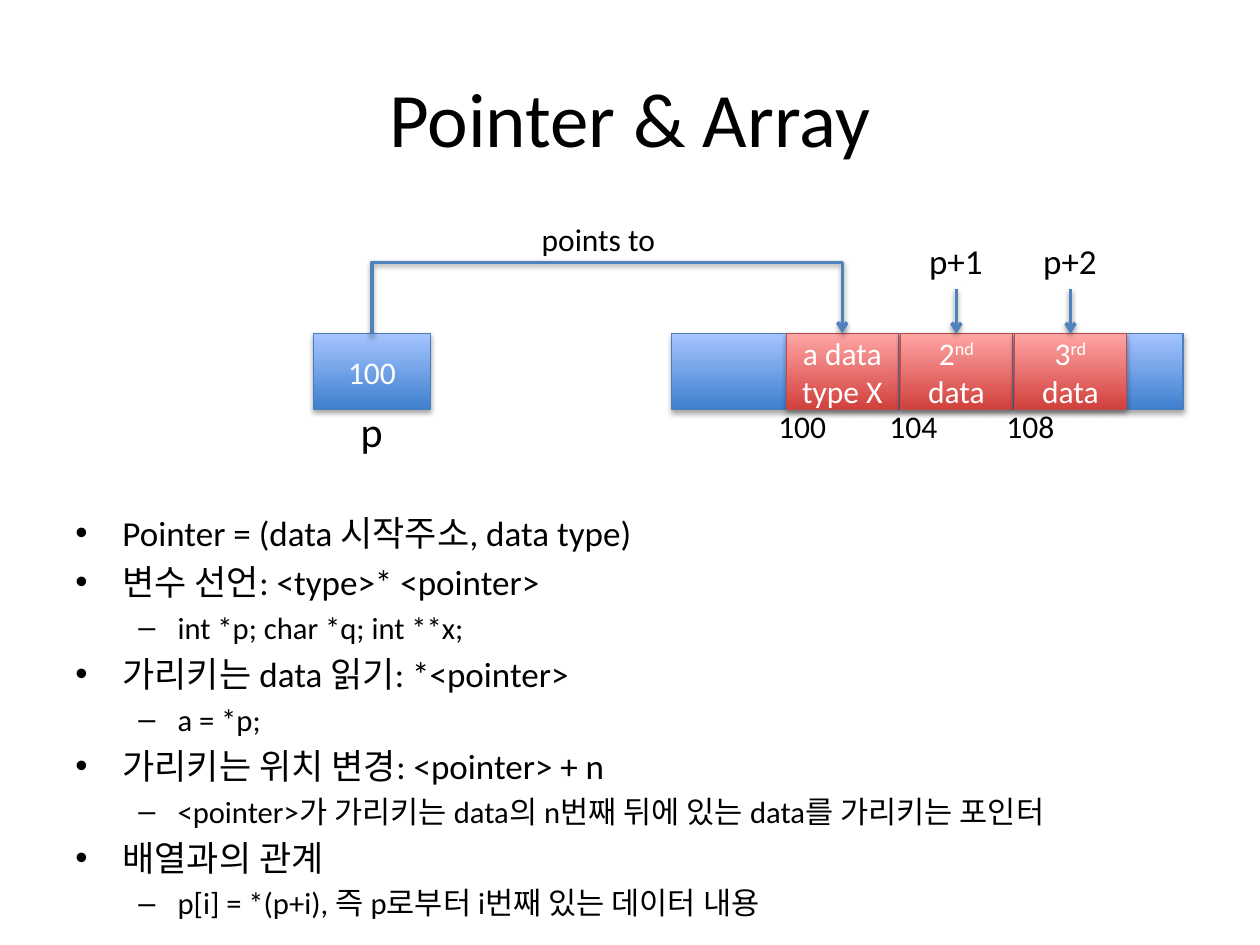
from dataclasses import dataclass

from lxml import etree
from pptx import Presentation
from pptx import util as u
from pptx.dml.color import RGBColor
from pptx.enum import shapes, text
from pptx.oxml import ns

Cm, Pt = u.Cm, u.Pt


@dataclass(frozen=True)
class Theme:
    font: str = "Calibri"
    ink: str = "000000"
    cell_ink: str = "FFFFFF"
    arrow: str = "4F81BD"
    title: float = 44
    name: float = 24
    body: float = 20
    detail: float = 17.5
    label: float = 18


@dataclass(frozen=True)
class Palette:
    bottom: str
    top: str
    border: str


@dataclass(frozen=True)
class Cell:
    left: float
    width: float
    palette: Palette
    lines: tuple = ()
    ordinal: str = ""  # raised suffix, followed by " data"

    @property
    def center(self) -> float:
        return self.left + self.width / 2


@dataclass(frozen=True)
class Label:
    words: str
    left: float
    top: float
    width: float
    height: float
    size: float


@dataclass(frozen=True)
class Bullet:
    words: str
    level: int = 0


THEME = Theme()
BLUE = Palette("3F80CE", "A4C4FF", "4B7EBC")
RED = Palette("D1403C", "FFA6A5", "BF4C48")

CELL_TOP, CELL_HEIGHT = 6.73, 1.52
ELEMENT_LEFT, ELEMENT_PITCH, ELEMENT_WIDTH = 15.85, 2.3, 2.26

POINTER = Cell(6.32, 2.36, BLUE, ("100",))
MEMORY = Cell(13.54, 10.31, BLUE)
ELEMENTS = [
    Cell(ELEMENT_LEFT + i * ELEMENT_PITCH, ELEMENT_WIDTH, RED, lines, ordinal)
    for i, (lines, ordinal) in enumerate(
        [(("a data", "type X"), ""), (("2",), "nd"), (("3",), "rd")])
]
LABELS = [
    Label("points to", 10.67, 4.32, 2.84, 1.02, THEME.label),
    Label("p", POINTER.center - 0.48, 8.05, 0.96, 1.27, THEME.name),
    *(Label(address, left, 8.08, 1.5, 1.02, THEME.label)
      for address, left in [("100", 15.44), ("104", 17.68), ("108", 20.04)]),
    *(Label(f"p+{i}", ELEMENTS[i].center - 0.8, 4.7, 1.6, 1.12, THEME.body)
      for i in (1, 2)),
]
BULLETS = [
    Bullet("Pointer = (data 시작주소, data type)"),
    Bullet("변수 선언: <type>* <pointer>"),
    Bullet("int *p; char *q; int **x;", 1),
    Bullet("가리키는 data 읽기: *<pointer>"),
    Bullet("a = *p;", 1),
    Bullet("가리키는 위치 변경: <pointer> + n"),
    Bullet("<pointer>가 가리키는 data의 n번째 뒤에 있는 data를 가리키는 포인터", 1),
    Bullet("배열과의 관계"),
    Bullet("p[i] = *(p+i), 즉 p로부터 i번째 있는 데이터 내용", 1),
]


def add_xml(parent, tag: str, **attributes):
    child = etree.SubElement(parent, ns.qn(tag))
    for key, value in attributes.items():
        child.set(key, str(value))
    return child


def set_font(paragraph, size: float, color: str) -> None:
    font = paragraph.font
    font.name, font.size = THEME.font, Pt(size)
    font.color.rgb = RGBColor.from_string(color)


def add_shadow(shape, opacity: int, distance: float) -> None:
    """Cast a soft shadow downwards; call after fill and line are set."""
    effects = add_xml(shape._element.spPr, "a:effectLst")
    shadow = add_xml(effects, "a:outerShdw", blurRad=Pt(3.1), dist=Pt(distance),
                     dir=5400000, rotWithShape=0)
    add_xml(add_xml(shadow, "a:srgbClr", val="000000"), "a:alpha", val=opacity * 1000)


def draw_cell(slide, cell: Cell) -> None:
    box = slide.shapes.add_shape(shapes.MSO_SHAPE.RECTANGLE, Cm(cell.left), Cm(CELL_TOP),
                                 Cm(cell.width), Cm(CELL_HEIGHT))
    box.fill.gradient()
    box.fill.gradient_angle = 90
    for stop, color in zip(box.fill.gradient_stops, (cell.palette.bottom, cell.palette.top)):
        stop.color.rgb = RGBColor.from_string(color)
    box.line.color.rgb = RGBColor.from_string(cell.palette.border)
    box.line.width = Pt(0.75)
    add_shadow(box, 35, 1.8)
    frame = box.text_frame
    frame.vertical_anchor = text.MSO_ANCHOR.MIDDLE
    frame.text = "\n".join(cell.lines)
    if cell.ordinal:
        for words, baseline in ((cell.ordinal, 30000), (" data", 0)):
            run = frame.paragraphs[0].add_run()
            run.text = words
            run._r.get_or_add_rPr().set("baseline", str(baseline))
    for paragraph in frame.paragraphs:
        paragraph.alignment = text.PP_ALIGN.CENTER
        set_font(paragraph, THEME.label, THEME.cell_ink)


def draw_label(slide, label: Label):
    box = slide.shapes.add_textbox(Cm(label.left), Cm(label.top),
                                   Cm(label.width), Cm(label.height))
    box.text_frame.word_wrap = False
    box.text_frame.text = label.words
    set_font(box.text_frame.paragraphs[0], label.size, THEME.ink)
    return box.text_frame


def draw_arrow(slide, kind, x1: float, y1: float, x2: float, y2: float):
    arrow = slide.shapes.add_connector(kind, Cm(x1), Cm(y1), Cm(x2), Cm(y2))
    arrow.line.color.rgb = RGBColor.from_string(THEME.arrow)
    arrow.line.width = Pt(2)
    add_xml(arrow.line._get_or_add_ln(), "a:tailEnd", type="arrow")
    add_shadow(arrow, 38, 1.6)
    return arrow


def draw_bridge(slide, start: float, end: float, rise: float) -> None:
    """Elbow arrow that climbs by rise, crosses over and comes down again."""
    middle, half_span, half_depth = (start + end) / 2, (end - start) / 2, 0.01
    bridge = draw_arrow(slide, shapes.MSO_CONNECTOR.ELBOW,
                        middle + half_depth, CELL_TOP + half_span,
                        middle - half_depth, CELL_TOP - half_span)
    properties = bridge._element.spPr
    properties.find(ns.qn("a:xfrm")).set("rot", "5400000")
    bend = round(rise / (2 * half_depth) * 100000)
    guides = properties.find(ns.qn("a:prstGeom")).find(ns.qn("a:avLst"))
    add_xml(guides, "a:gd", name="adj1", fmla=f"val {bend}")


def draw_bullets(slide) -> None:
    frame = slide.shapes.add_textbox(Cm(1.27), Cm(10.19), Cm(22.86), Cm(8.03)).text_frame
    frame.word_wrap = True
    frame.text = "\n".join(bullet.words for bullet in BULLETS)
    styles = [("•", 0.95, 0.95, THEME.body), ("–", 2.06, 0.79, THEME.detail)]
    for paragraph, bullet in zip(frame.paragraphs, BULLETS):
        mark, margin, hanging, size = styles[bullet.level]
        paragraph.level = bullet.level
        paragraph.space_before = Pt(size * 0.2)
        properties = paragraph._p.get_or_add_pPr()
        properties.set("marL", str(Cm(margin)))
        properties.set("indent", str(-Cm(hanging)))
        add_xml(properties, "a:buFont", typeface="Arial")
        add_xml(properties, "a:buChar", char=mark)
        set_font(paragraph, size, THEME.ink)


def main() -> None:
    deck = Presentation()
    deck.slide_width, deck.slide_height = Cm(25.4), Cm(19.05)
    slide = deck.slides.add_slide(deck.slide_layouts[6])

    title = draw_label(slide, Label("Pointer & Array", 1.27, 0.76, 22.86, 3.18, THEME.title))
    title.word_wrap = True
    title.vertical_anchor = text.MSO_ANCHOR.MIDDLE
    title.paragraphs[0].alignment = text.PP_ALIGN.CENTER

    for cell in (POINTER, MEMORY, *ELEMENTS):
        draw_cell(slide, cell)
    for label in LABELS:
        draw_label(slide, label)
    draw_bridge(slide, POINTER.center, ELEMENTS[0].center, rise=1.45)
    for element in ELEMENTS[1:]:
        draw_arrow(slide, shapes.MSO_CONNECTOR.STRAIGHT,
                   element.center, 5.82, element.center, CELL_TOP)
    draw_bullets(slide)
    deck.save("out.pptx")


if __name__ == "__main__":
    main()
